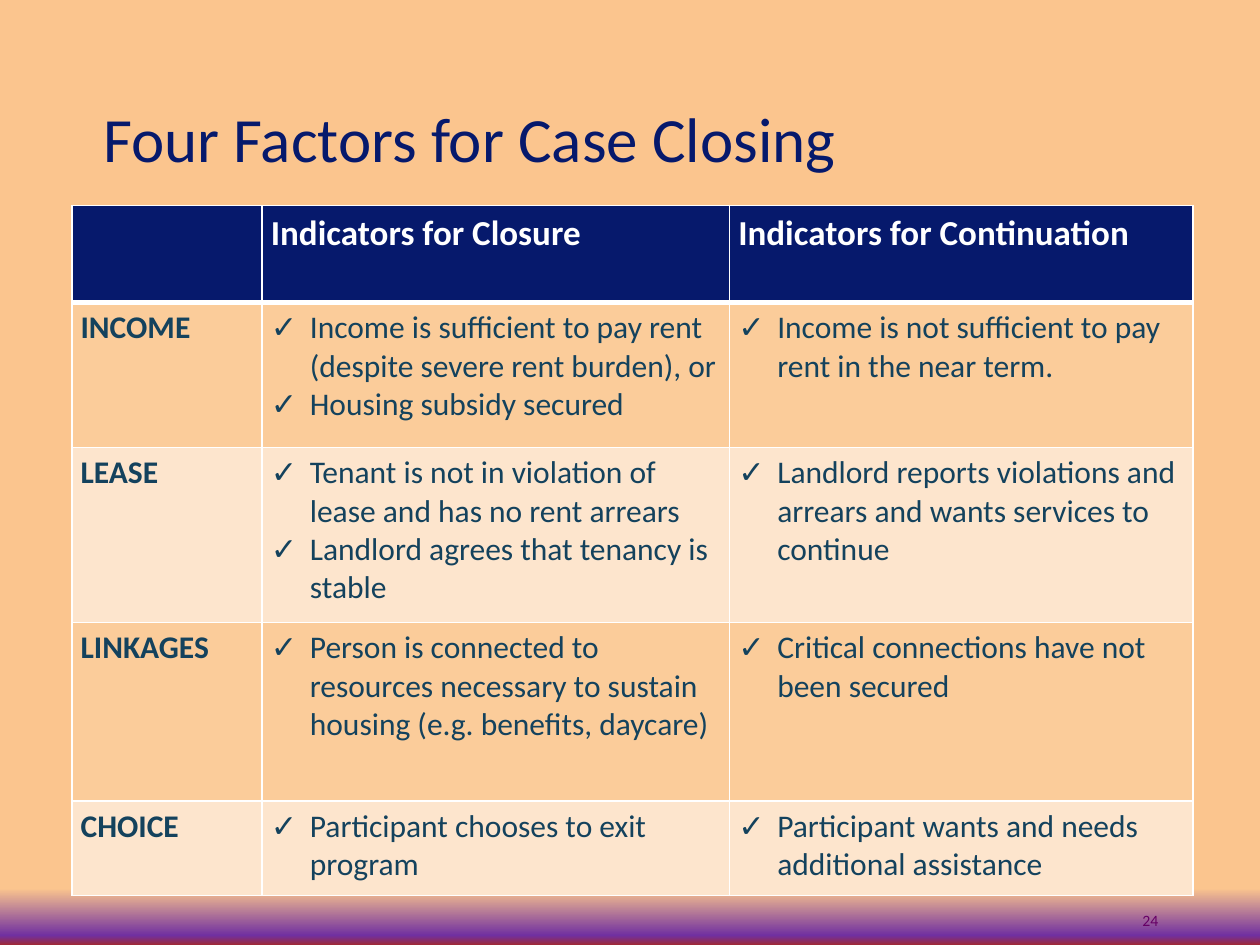
from dataclasses import dataclass

from lxml import etree
from pptx import Presentation
from pptx.dml.color import RGBColor
from pptx.enum.text import MSO_ANCHOR, PP_ALIGN
from pptx.oxml.ns import qn
from pptx.util import Inches, Pt

MIDDLE = MSO_ANCHOR.MIDDLE
LEFT, CENTER = PP_ALIGN.LEFT, PP_ALIGN.CENTER
UNIT = Inches(0.1)
GRID_COLS, GRID_ROWS = 100, 75


@dataclass(frozen=True)
class Theme:
    font: str = "Calibri"
    navy: str = "06196C"
    white: str = "FFFFFF"
    body: str = "14425D"
    number: str = "660066"
    bands: tuple = ("FBCC9A", "FDE5CD")
    backdrop: tuple = ((89, "FBC58E"), (94, "FBC58E"), (99, "7030A0"), (100, "9F2936"))
    title_size: int = 36
    header_size: int = 20
    body_size: int = 18
    number_size: int = 9
    rule: int = 1
    header_rule: int = 3


THEME = Theme()
COL_WEIGHTS = (1.51, 3.71, 3.68)
ROW_WEIGHTS = (0.77, 1.15, 1.39, 1.42, 0.75)
HEADERS = ("", "Indicators for Closure", "Indicators for Continuation")
FACTORS = (
    ("INCOME",
     ("Income is sufficient to pay rent (despite severe rent burden), or",
      "Housing subsidy secured"),
     ("Income is not sufficient to pay rent in the near term.",)),
    ("LEASE",
     ("Tenant is not in violation of lease and has no rent arrears",
      "Landlord agrees that tenancy is stable"),
     ("Landlord reports violations and arrears and wants services to continue",)),
    ("LINKAGES",
     ("Person is connected to resources necessary to sustain housing (e.g. benefits, daycare)",),
     ("Critical connections have not been secured",)),
    ("CHOICE",
     ("Participant chooses to exit program",),
     ("Participant wants and needs additional assistance",)),
)


def grid_box(col, row, cols, rows):
    return tuple(round(n * UNIT) for n in (col, row, cols, rows))


def style(p, size, color, bold=False):
    p.font.name = THEME.font
    p.font.size = Pt(size)
    p.font.bold = bold
    p.font.color.rgb = RGBColor.from_string(color)


def paint_background(slide):
    slide.background.fill.gradient()
    grad = slide.element.find(".//" + qn("a:gradFill"))
    stops = grad.find(qn("a:gsLst"))
    for stop in list(stops):
        stops.remove(stop)
    for share, color in THEME.backdrop:
        stop = etree.SubElement(stops, qn("a:gs"), pos=str(share * 1000))
        etree.SubElement(stop, qn("a:srgbClr"), val=color)
    grad.find(qn("a:lin")).set("ang", "5400000")


def add_label(slide, box, text, size, color, align=LEFT, spacing=1.0):
    tf = slide.shapes.add_textbox(*box).text_frame
    tf.word_wrap = True
    tf.vertical_anchor = MIDDLE
    p = tf.paragraphs[0]
    p.text = text
    p.alignment = align
    p.line_spacing = spacing
    style(p, size, color)


def add_check(p):
    props = p._p.get_or_add_pPr()
    indent = Inches(0.31)
    props.set("marL", str(indent))
    props.set("indent", str(-indent))
    etree.SubElement(props, qn("a:buFont"), typeface="Arial")
    etree.SubElement(props, qn("a:buChar"), char="✓")


def set_borders(cell, top, bottom):
    props = cell._tc.get_or_add_tcPr()
    widths = {"L": THEME.rule, "R": THEME.rule, "T": top, "B": bottom}
    for side, width in widths.items():
        line = etree.SubElement(props, qn("a:ln" + side), w=str(Pt(width)))
        fill = etree.SubElement(line, qn("a:solidFill"))
        etree.SubElement(fill, qn("a:srgbClr"), val=THEME.white)


def fill_cell(cell, lines, fill, size, color, bold, top, bottom, checked=False):
    cell.margin_left = cell.margin_right = Inches(0.07)
    cell.margin_top = cell.margin_bottom = Inches(0.05)
    set_borders(cell, top, bottom)
    cell.fill.solid()
    cell.fill.fore_color.rgb = RGBColor.from_string(fill)
    tf = cell.text_frame
    for i, line in enumerate(lines):
        p = tf.add_paragraph() if i else tf.paragraphs[0]
        p.text = line
        if checked:
            add_check(p)
        style(p, size, color, bold)


def add_factor_table(slide, box):
    shape = slide.shapes.add_table(len(ROW_WEIGHTS), len(COL_WEIGHTS), *box)
    table = shape.table
    table.horz_banding = False
    for col, weight in zip(table.columns, COL_WEIGHTS):
        col.width = round(box[2] * weight / sum(COL_WEIGHTS))
    for row, weight in zip(table.rows, ROW_WEIGHTS):
        row.height = round(box[3] * weight / sum(ROW_WEIGHTS))
    for c, text in enumerate(HEADERS):
        fill_cell(table.cell(0, c), (text,), THEME.navy, THEME.header_size,
                  THEME.white, True, THEME.rule, THEME.header_rule)
    for r, (factor, *indicators) in enumerate(FACTORS, 1):
        band = THEME.bands[(r - 1) % 2]
        top = THEME.header_rule if r == 1 else THEME.rule
        for c, lines in enumerate([(factor,), *indicators]):
            fill_cell(table.cell(r, c), lines, band, THEME.body_size, THEME.body,
                      c == 0, top, THEME.rule, checked=c > 0)


def main():
    prs = Presentation()
    prs.slide_width = GRID_COLS * UNIT
    prs.slide_height = GRID_ROWS * UNIT
    slide = prs.slides.add_slide(prs.slide_layouts[6])
    paint_background(slide)
    add_label(slide, grid_box(7.2, 5, 76.8, 12.5), "Four Factors for Case Closing",
              THEME.title_size, THEME.navy, spacing=0.9)
    add_factor_table(slide, grid_box(5.7, 16.3, 89, 54.8))
    add_label(slide, grid_box(82.6, 71, 17.4, 4), "24",
              THEME.number_size, THEME.number, CENTER)
    prs.save("out.pptx")


if __name__ == "__main__":
    main()
